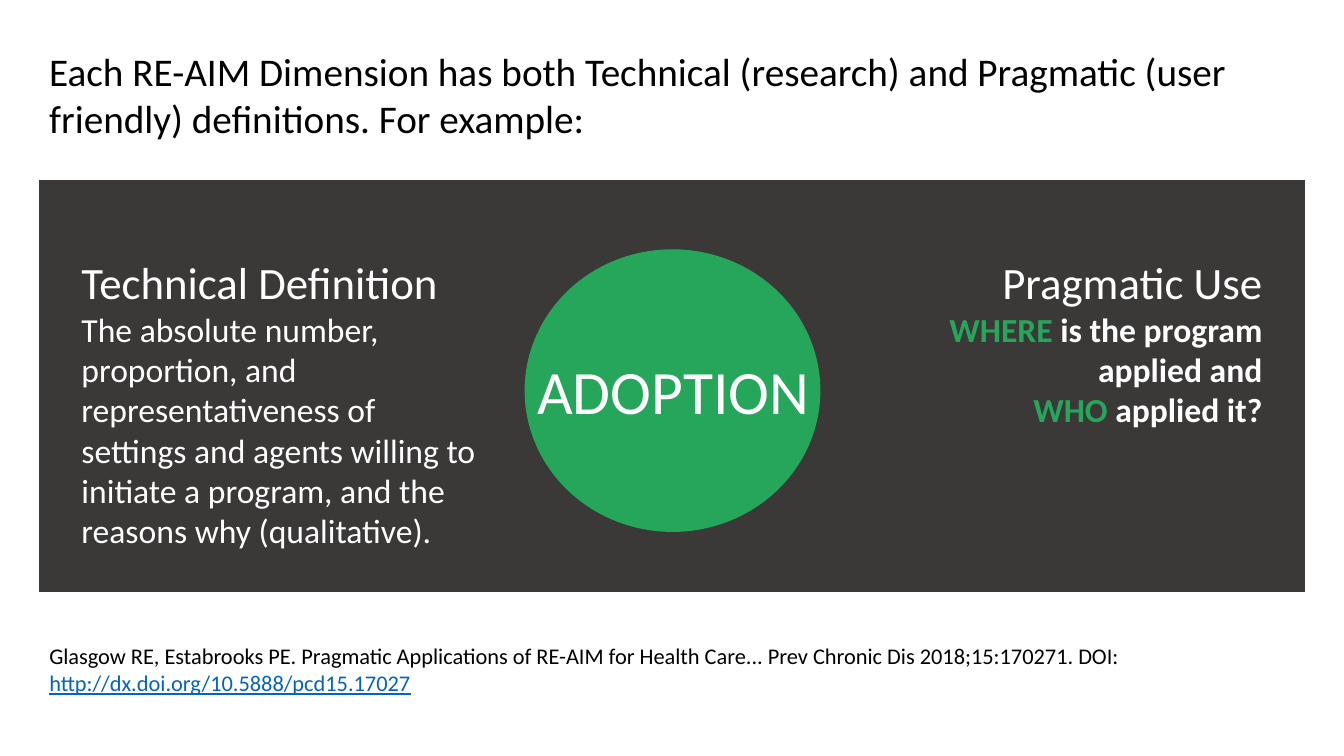
from dataclasses import dataclass

from pptx import Presentation
from pptx.dml.color import RGBColor
from pptx.enum.shapes import MSO_SHAPE as Preset
from pptx.enum.text import PP_ALIGN as Align
from pptx.util import Inches, Pt


@dataclass(frozen=True)
class Theme:
    font: str = "Calibri"
    panel: str = "3B3838"
    accent: str = "26A65B"
    light: str = "FFFFFF"
    dark: str = "000000"
    link: str = "0563C1"
    dimension: int = 44
    heading: int = 32
    title: int = 28
    body: int = 24
    source: int = 16


class SlideBuilder:
    def __init__(self, deck, theme):
        self.theme = theme
        self.page = deck.slides.add_slide(deck.slide_layouts[6])

    def shape(self, preset, place, color):
        shape = self.page.shapes.add_shape(preset, *map(Inches, place))
        shape.shadow.inherit = False
        shape.fill.solid()
        shape.fill.fore_color.rgb = RGBColor.from_string(color)
        shape.line.color.rgb = RGBColor.from_string(color)
        shape.line.width = Pt(1)

    def text(self, place, paragraphs, align=Align.LEFT):
        box = self.page.shapes.add_textbox(*map(Inches, place))
        frame = box.text_frame
        frame.word_wrap = True
        for index, (size, spans) in enumerate(paragraphs):
            para = frame.add_paragraph() if index else frame.paragraphs[0]
            para.alignment = align
            for words, color, extras in spans:
                span = para.add_run()
                span.text = words
                span.font.color.rgb = RGBColor.from_string(color)
                formats = {"name": self.theme.font, "size": Pt(size), **extras}
                for name, value in formats.items():
                    setattr(span.font, name, value)


def main():
    deck = Presentation()
    deck.slide_width, deck.slide_height = Inches(13.33), Inches(7.5)
    theme = Theme()
    slide = SlideBuilder(deck, theme)
    bold = {"bold": True}

    slide.shape(Preset.RECTANGLE, (0.39, 1.79, 12.55, 4.08), theme.panel)
    slide.shape(Preset.OVAL, (5.21, 2.48, 2.92, 2.79), theme.accent)
    slide.text(
        (5.23, 3.45, 3.22, 0.84),
        [(theme.dimension, [("ADOPTION", theme.light, {})])],
    )
    slide.text(
        (0.71, 2.48, 4.17, 3.06),
        [
            (theme.heading, [("Technical Definition", theme.light, {})]),
            (theme.body, [(
                "The absolute number, proportion, and representativeness of "
                "settings and agents willing to initiate a program, and the "
                "reasons why (qualitative).", theme.light, {},
            )]),
        ],
    )
    slide.text(
        (8.45, 2.48, 4.17, 1.85),
        [
            (theme.heading, [("Pragmatic Use", theme.light, {})]),
            (theme.body, [
                ("WHERE ", theme.accent, bold),
                ("is the program applied and", theme.light, bold),
            ]),
            (theme.body, [
                ("WHO ", theme.accent, bold),
                ("applied it?", theme.light, bold),
            ]),
        ],
        Align.RIGHT,
    )
    slide.text(
        (0.39, 6.32, 11.98, 0.91),
        [(theme.source, [
            ("Glasgow RE, Estabrooks PE. Pragmatic Applications of RE-AIM for "
             "Health Care... Prev Chronic Dis 2018;15:170271. DOI: ",
             theme.dark, {}),
            ("http://dx.doi.org/10.5888/pcd15.17027", theme.link,
             {"underline": True}),
        ])],
    )
    slide.text(
        (0.39, 0.42, 12.34, 1.04),
        [(theme.title, [(
            "Each RE-AIM Dimension has both Technical (research) and Pragmatic "
            "(user friendly) definitions. For example:", theme.dark, {},
        )])],
    )
    deck.save("out.pptx")


if __name__ == "__main__":
    main()
